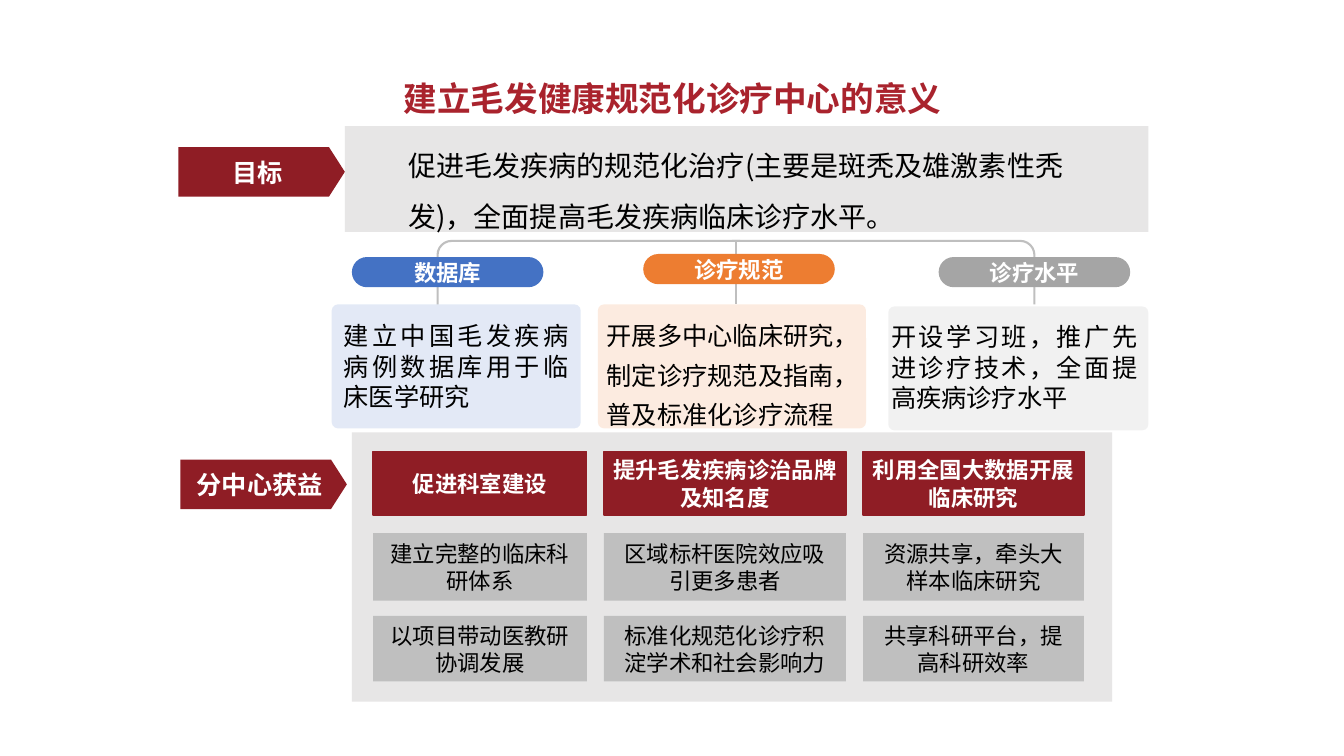
import math
from collections import namedtuple

from lxml import etree
from pptx import Presentation
from pptx.dml.color import RGBColor
from pptx.enum.shapes import MSO_CONNECTOR, MSO_SHAPE
from pptx.enum.text import MSO_ANCHOR, PP_ALIGN
from pptx.oxml.ns import qn
from pptx.util import Inches, Pt

RECT = MSO_SHAPE.RECTANGLE
ROUNDED = MSO_SHAPE.ROUNDED_RECTANGLE
PENTAGON = MSO_SHAPE.PENTAGON
STRAIGHT = MSO_CONNECTOR.STRAIGHT
TOP, MIDDLE = MSO_ANCHOR.TOP, MSO_ANCHOR.MIDDLE
LEFT, CENTER, JUSTIFY = PP_ALIGN.LEFT, PP_ALIGN.CENTER, PP_ALIGN.JUSTIFY

FONT = "Noto Sans CJK SC"
LINE_HEIGHT = 1.22
COLUMNS, ROWS = 1333, 750
CELL = Inches(0.01)
COLORS = {
    "title": "A9232D", "label": "8F1D25", "panel": "E7E6E6", "benefit": "BFBFBF",
    "branch": "BFBFBF", "database": "4472C4", "standard": "ED7D31", "level": "A5A5A5",
    "black": "000000", "white": "FFFFFF",
}
STYLES = {
    "title": {"size": 24, "bold": True, "color": "title", "align": CENTER, "spacing": 0.9},
    "goal": {"size": 20, "bold": False, "color": "black", "align": LEFT, "spacing": 1.5},
    "label": {"size": 18, "bold": True, "color": "white", "align": CENTER, "spacing": 1},
    "heading": {"size": 16, "bold": True, "color": "white", "align": CENTER, "spacing": 1},
    "benefit": {"size": 16, "bold": False, "color": "black", "align": CENTER, "spacing": 1},
    "spaced": {"size": 18, "bold": False, "color": "black", "align": LEFT, "spacing": 1.3},
    "justified": {"size": 18, "bold": False, "color": "black", "align": JUSTIFY, "spacing": 1},
}
Box = namedtuple("Box", "left top width height")
Pillar = namedtuple("Pillar", "color name card pill note style text")

PILLARS = [
    Pillar("database", "数据库", Box(329, 302, 247, 123), Box(349, 255, 190, 30),
           Box(331, 312, 243, 101), "justified", "建立中国毛发疾病病例数据库用于临床医学研究"),
    Pillar("standard", "诊疗规范", Box(593, 302, 266, 123), Box(638, 252, 190, 30),
           Box(592, 303, 284, 124), "spaced", "开展多中心临床研究，制定诊疗规范及指南，普及标准化诊疗流程"),
    Pillar("level", "诊疗水平", Box(881, 304, 258, 123), Box(931, 255, 190, 30),
           Box(874, 313, 264, 101), "justified", "开设学习班，推广先进诊疗技术，全面提高疾病诊疗水平"),
]
BENEFIT_WIDTHS = (212, 240, 219)
BENEFIT_GAP = 17
BENEFIT_ROWS = [
    (19, 63, ["促进科室建设", "提升毛发疾病诊治品牌及知名度", "利用全国大数据开展临床研究"]),
    (100, 67, ["建立完整的临床科研体系", "区域标杆医院效应吸引更多患者", "资源共享，牵头大样本临床研究"]),
    (182, 65, ["以项目带动医教研协调发展", "标准化规范化诊疗积淀学术和社会影响力", "共享科研平台，提高科研效率"]),
]


def rgb(color):
    return RGBColor.from_string(COLORS[color])


def emu(box):
    return [round(length * CELL) for length in box]


def write(part, text, style, anchor=MIDDLE, insets=(0.1, 0.05, 0.1, 0.05)):
    look = STYLES[style]
    frame = part.text_frame
    sides = ("margin_left", "margin_top", "margin_right", "margin_bottom")
    frame_format = {"word_wrap": True, "vertical_anchor": anchor,
                    **dict(zip(sides, map(Inches, insets)))}
    for name, value in frame_format.items():
        setattr(frame, name, value)
    paragraph = frame.paragraphs[0]
    paragraph.alignment = look["align"]
    paragraph.line_spacing = Pt(round(look["size"] * LINE_HEIGHT * look["spacing"], 1))
    run = paragraph.add_run()
    run.text = text
    for name, value in {"name": FONT, "size": Pt(look["size"]), "bold": look["bold"]}.items():
        setattr(run.font, name, value)
    run.font.color.rgb = rgb(look["color"])
    etree.SubElement(run.font._element, qn("a:ea"), typeface=FONT)


def add_block(slide, box, color, kind=RECT, corner=None, opacity=None):
    block = slide.shapes.add_shape(kind, *emu(box))
    block.shadow.inherit = False
    block.fill.solid()
    block.fill.fore_color.rgb = rgb(color)
    block.line.fill.background()
    if corner is not None:
        block.adjustments[0] = corner
    if opacity is not None:
        tint = block._element.spPr.find(".//" + qn("a:srgbClr"))
        etree.SubElement(tint, qn("a:alpha"), val=str(opacity * 1000))
    return block


def style_branch(branch):
    branch.line.color.rgb = rgb("branch")
    branch.line.width = Pt(1.5)


def add_title(slide, box):
    title = slide.shapes.add_textbox(*emu(box))
    write(title, "建立毛发健康规范化诊疗中心的意义", "title", TOP, (0.04,) * 4)


def add_label(slide, box, text):
    write(add_block(slide, box, "label", PENTAGON, 0.32), text, "label")


def add_goal(slide, box):
    goal = add_block(slide, box, "panel")
    write(goal, "促进毛发疾病的规范化治疗(主要是斑秃及雄激素性秃发)，全面提高毛发疾病临床诊疗水平。",
          "goal", TOP, (0.63, 0.05, 0.65, 0.05))
    add_label(slide, Box(box.left - 165, box.top + 21, 165, 49), "目标")


def add_branches(slide, box, radius=14, reach=300):
    bottom = box.top + box.height
    for outer, inward in ((box.left, 1), (box.left + box.width, -1)):
        angles = [math.radians(step * 15) for step in range(7)]
        points = [(outer + inward * radius * (1 - math.cos(angle)),
                   box.top + radius * (1 - math.sin(angle))) for angle in angles]
        points.append((outer + inward * reach, box.top))
        builder = slide.shapes.build_freeform(*emu((outer, bottom)))
        builder.add_line_segments([tuple(emu(point)) for point in points], close=False)
        bracket = builder.convert_to_shape()
        bracket.shadow.inherit = False
        bracket.fill.background()
        style_branch(bracket)
    middle = box.left + box.width / 2
    stem = slide.shapes.add_connector(STRAIGHT, *emu((middle, box.top, middle, bottom)))
    style_branch(stem)
    etree.SubElement(stem._element.spPr, qn("a:effectLst"))


def add_pillar(slide, pillar):
    pill = add_block(slide, pillar.pill, pillar.color, ROUNDED, 0.5)
    write(pill, pillar.name, "heading")
    add_block(slide, pillar.card, pillar.color, ROUNDED, 0.05, opacity=15)
    note = slide.shapes.add_textbox(*emu(pillar.note))
    write(note, pillar.text, pillar.style, TOP)


def add_benefits(slide, box):
    add_block(slide, box, "panel")
    add_label(slide, Box(box.left - 170, box.top + 27, 165, 49), "分中心获益")
    for row, (offset, height, texts) in enumerate(BENEFIT_ROWS):
        left = box.left + 21
        for width, text in zip(BENEFIT_WIDTHS, texts):
            place = Box(left, box.top + offset, width, height)
            if row == 0:
                heading = add_block(slide, place, "label")
                heading.line.color.rgb = rgb("label")
                heading.line.width = Pt(1)
                write(heading, text, "heading", insets=(0.09, 0.05, 0.09, 0.05))
            else:
                write(add_block(slide, place, "benefit"), text, "benefit")
            left += width + BENEFIT_GAP


def main():
    deck = Presentation()
    deck.slide_width, deck.slide_height = COLUMNS * CELL, ROWS * CELL
    slide = deck.slides.add_slide(deck.slide_layouts[6])
    add_benefits(slide, Box(349, 429, 754, 267))
    add_goal(slide, Box(342, 125, 797, 105))
    add_title(slide, Box(218, 77, 898, 52))
    add_branches(slide, Box(434, 239, 592, 63))
    for pillar in PILLARS:
        add_pillar(slide, pillar)
    deck.save("out.pptx")


if __name__ == "__main__":
    main()
